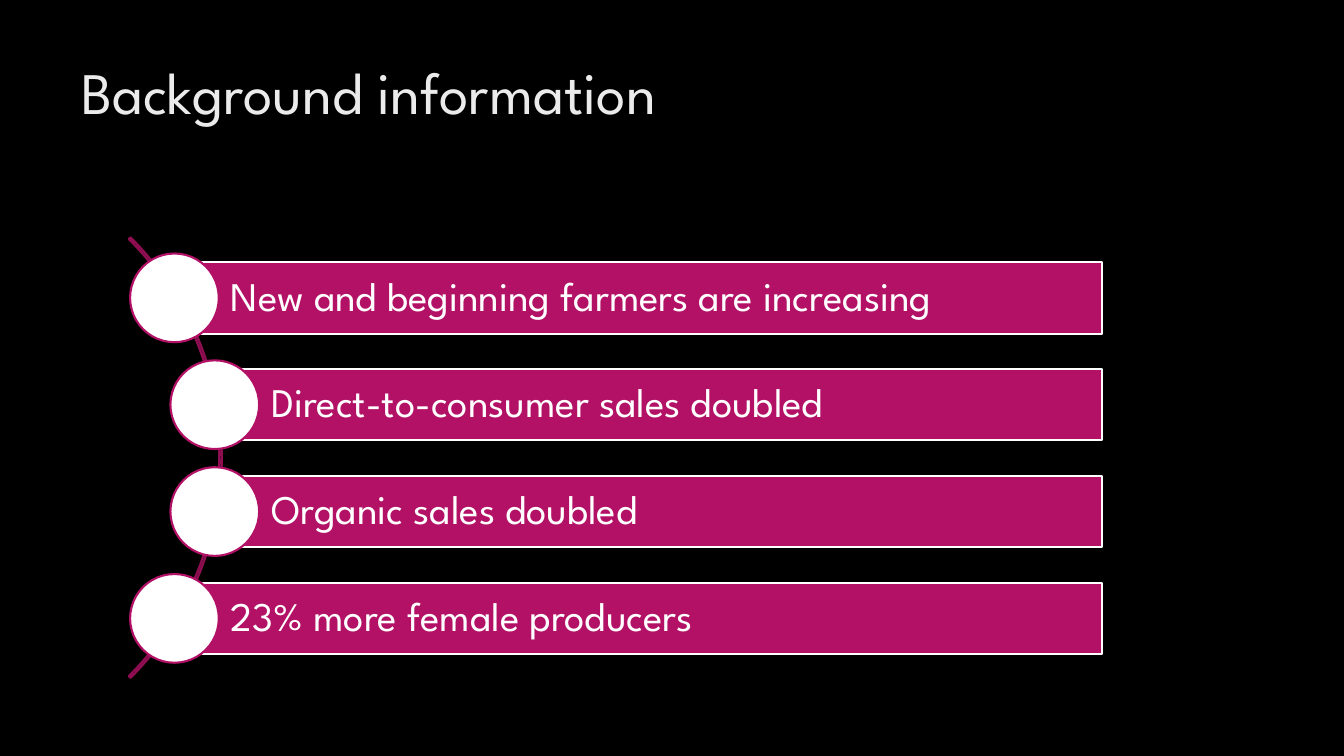
from dataclasses import dataclass

from pptx import Presentation
from pptx.dml.color import RGBColor
from pptx.enum import shapes, text
from pptx.util import Inches, Pt

COLORS = {
    "background": "000000",
    "title": "EBEBEB",
    "bar": "B31166",
    "arc": "8F0E52",
    "white": "FFFFFF",
}
FONT = "League Spartan"
BAR_RIGHT, BAR_TOP, BAR_HEIGHT, BAR_PITCH = 10.93, 2.6, 0.71, 1.06
CIRCLE = 0.88


@dataclass
class Bar:
    label: str
    left: float


BARS = [
    Bar("New and beginning farmers are increasing", 1.73),
    Bar("Direct-to-consumer sales doubled", 2.13),
    Bar("Organic sales doubled", 2.13),
    Bar("23% more female producers", 1.73),
]


def rgb(name: str) -> RGBColor:
    return RGBColor.from_string(COLORS[name])


def write(sp, content: str, *, size: float, color: str, anchor,
          insets=(0.1, 0.05, 0.1, 0.05), spacing: float = 1.0) -> None:
    """Fill a shape with one left-aligned paragraph; insets run left, top, right, bottom."""
    tf = sp.text_frame
    tf.word_wrap = True
    tf.vertical_anchor = anchor
    tf.margin_left, tf.margin_top, tf.margin_right, tf.margin_bottom = map(Inches, insets)
    p = tf.paragraphs[0]
    p.alignment = text.PP_ALIGN.LEFT
    p.line_spacing = spacing
    r = p.add_run()
    r.text = content
    r.font.name = FONT
    r.font.size = Pt(size)
    r.font.color.rgb = rgb(color)


def add_outlined(s, kind, left: float, top: float, width: float, height: float,
                 *, line: str, fill: str | None = None):
    sp = s.shapes.add_shape(kind, Inches(left), Inches(top), Inches(width), Inches(height))
    sp.shadow.inherit = False
    if fill:
        sp.fill.solid()
        sp.fill.fore_color.rgb = rgb(fill)
    else:
        sp.fill.background()
    sp.line.color.rgb = rgb(line)
    sp.line.width = Pt(1.5)
    return sp


def add_bar(s, bar: Bar, top: float) -> None:
    """Draw a labelled bar with a circle centred on its left edge."""
    sp = add_outlined(s, shapes.MSO_SHAPE.RECTANGLE, bar.left, top,
                      BAR_RIGHT - bar.left, BAR_HEIGHT, fill="bar", line="white")
    write(sp, bar.label, size=29, color="white", anchor=text.MSO_ANCHOR.MIDDLE,
          insets=(0.56, 0.08, 0.08, 0.08), spacing=0.9)
    add_outlined(s, shapes.MSO_SHAPE.OVAL, bar.left - CIRCLE / 2,
                 top + (BAR_HEIGHT - CIRCLE) / 2, CIRCLE, CIRCLE, fill="white", line="bar")


def main() -> None:
    prs = Presentation()
    prs.slide_width, prs.slide_height = Inches(13.33), Inches(7.5)
    s = prs.slides.add_slide(prs.slide_layouts[6])
    s.background.fill.solid()
    s.background.fill.fore_color.rgb = rgb("background")

    title = s.shapes.add_textbox(Inches(0.71), Inches(0.5), Inches(10.29), Inches(1.53))
    write(title, "Background information", size=42, color="title",
          anchor=text.MSO_ANCHOR.TOP)

    arc = add_outlined(s, shapes.MSO_SHAPE.BLOCK_ARC, -3.98, 1.45, 6.18, 6.18, line="arc")
    # Start and end angles (315° and 45°), then the band's thickness
    for i, value in enumerate((189, 27, 0.004)):
        arc.adjustments[i] = value

    for i, bar in enumerate(BARS):
        add_bar(s, bar, BAR_TOP + i * BAR_PITCH)

    prs.save("out.pptx")


if __name__ == "__main__":
    main()
